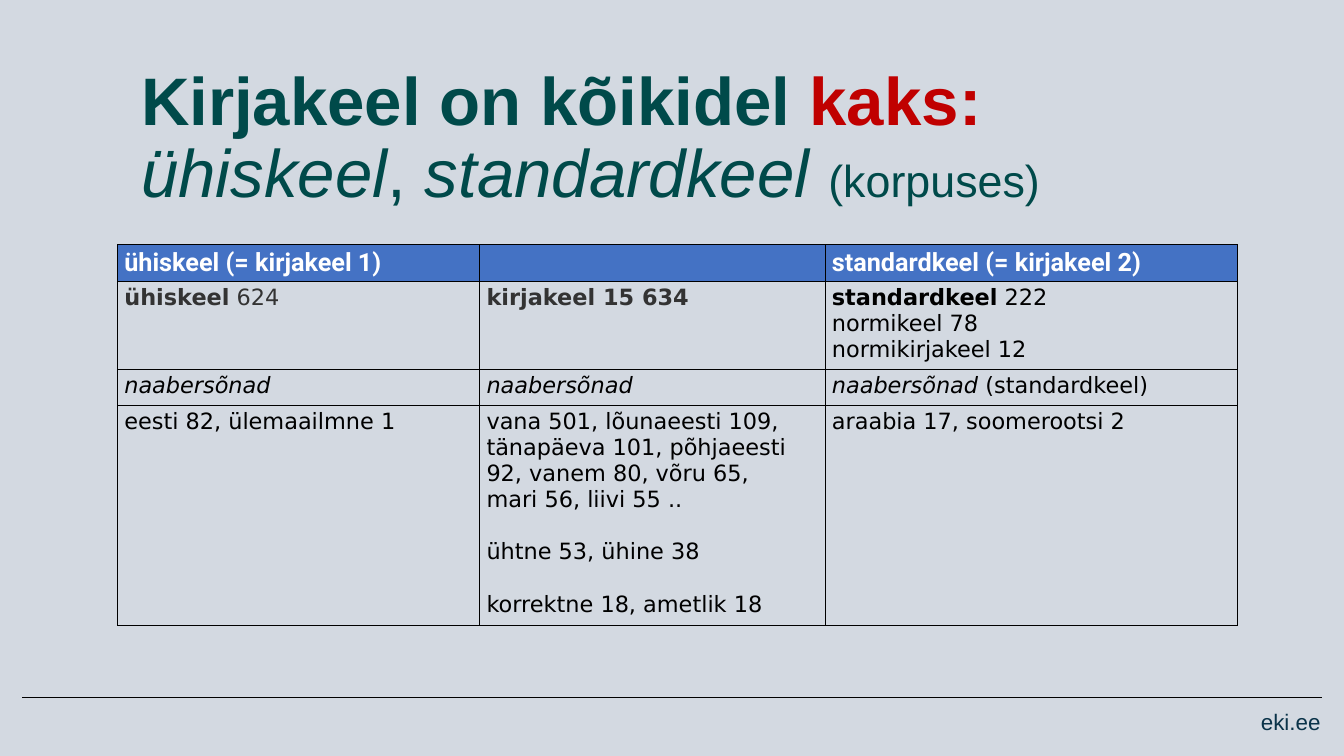
from lxml.etree import SubElement
from pptx import Presentation
from pptx.dml.color import RGBColor
from pptx.enum.shapes import MSO_CONNECTOR as Connector
from pptx.enum.text import MSO_ANCHOR as Anchor, PP_ALIGN as Align
from pptx.oxml.ns import qn
from pptx.util import Inches, Pt

THEME = {
    "background": "D3D9E1",
    "rule": "000000",
    "header_fill": "4472C4",
    "styles": {
        "title": dict(name="Arial", size=72, color="004A4A", bold=True),
        "accent": dict(name="Arial", size=72, color="C00000", bold=True),
        "term": dict(name="Arial", size=72, color="004A4A", italic=True),
        "joiner": dict(name="Arial", size=72, color="004A4A"),
        "note": dict(name="Arial", size=48, color="004A4A"),
        "footer": dict(name="Arial", size=24, color="0A3349"),
        "header": dict(name="Roboto", size=27, color="FFFFFF", bold=True),
        "grey": dict(name="DejaVu Sans", size=24, color="333333"),
        "grey_bold": dict(name="DejaVu Sans", size=24, color="333333", bold=True),
        "body": dict(name="DejaVu Sans", size=24, color="000000"),
        "body_bold": dict(name="DejaVu Sans", size=24, color="000000", bold=True),
        "body_italic": dict(name="DejaVu Sans", size=24, color="000000", italic=True),
    },
}
GROUP_GAP = Pt(28)

# Each paragraph is a list of (text, style) runs; "\n" is a line break.
TITLE = [
    ("Kirjakeel on kõikidel ", "title"), ("kaks:", "accent"), ("\n", "accent"),
    ("ühiskeel", "term"), (", ", "joiner"), ("standardkeel ", "term"),
    ("(korpuses)", "note"),
]
FOOTER = [("eki.ee", "footer")]

# Each cell is a list of groups, each group a list of paragraphs.
ROWS = [
    [
        [[[("ühiskeel (= kirjakeel 1)", "header")]]],
        [],
        [[[("standardkeel (= kirjakeel 2)", "header")]]],
    ],
    [
        [[[("ühiskeel", "grey_bold"), (" 624", "grey")]]],
        [[[("kirjakeel 15 634", "grey_bold")]]],
        [[
            [("standardkeel", "body_bold"), (" 222", "body")],
            [("normikeel 78", "body")],
            [("normikirjakeel 12", "body")],
        ]],
    ],
    [
        [[[("naabersõnad", "body_italic")]]],
        [[[("naabersõnad", "body_italic")]]],
        [[[("naabersõnad ", "body_italic"), ("(standardkeel)", "body")]]],
    ],
    [
        [[[("eesti 82, ülemaailmne 1", "body")]]],
        [
            [
                [("vana 501, lõunaeesti 109, tänapäeva 101, põhjaeesti 92, "
                  "vanem 80, võru 65,", "body")],
                [("mari 56, liivi 55 ..", "body")],
            ],
            [[("ühtne 53, ühine 38", "body")]],
            [[("korrektne 18, ametlik 18", "body")]],
        ],
        [[[("araabia 17, soomerootsi 2", "body")]]],
    ],
]
COLUMN_WIDTHS = [5.39, 5.14, 6.14]
ROW_HEIGHTS = [0.54, 1.27, 0.54, 3.21]


def rgb(value):
    return RGBColor.from_string(value)


def write_runs(paragraph, runs):
    for text, style in runs:
        if text == "\n":
            paragraph.add_line_break()
            continue
        run = paragraph.add_run()
        run.text = text
        settings = {"bold": False, "italic": False, **THEME["styles"][style]}
        run.font.color.rgb = rgb(settings.pop("color"))
        settings["size"] = Pt(settings["size"])
        for key, value in settings.items():
            setattr(run.font, key, value)


def add_text(slide, box, runs, align, anchor):
    frame = slide.shapes.add_textbox(*map(Inches, box)).text_frame
    frame.word_wrap = True
    frame.vertical_anchor = anchor
    paragraph = frame.paragraphs[0]
    paragraph.alignment = align
    paragraph.line_spacing = 0.9
    write_runs(paragraph, runs)


def write_groups(frame, groups):
    """Write the paragraphs, with a gap before each group but the first."""
    paragraph = None
    for group in groups:
        for index, runs in enumerate(group):
            is_first = paragraph is None
            paragraph = frame.paragraphs[0] if is_first else frame.add_paragraph()
            if index == 0 and not is_first:
                paragraph.space_before = GROUP_GAP
            write_runs(paragraph, runs)


def add_borders(cell):
    properties = cell._tc.get_or_add_tcPr()
    for position, side in enumerate(("a:lnL", "a:lnR", "a:lnT", "a:lnB")):
        border = SubElement(properties, qn(side), w=str(Pt(1)))
        fill = SubElement(border, qn("a:solidFill"))
        SubElement(fill, qn("a:srgbClr"), val=THEME["rule"])
        properties.insert(position, border)


def add_word_table(slide):
    table = slide.shapes.add_table(
        len(ROWS), len(COLUMN_WIDTHS), Inches(1.75), Inches(3.64),
        Inches(sum(COLUMN_WIDTHS)), Inches(sum(ROW_HEIGHTS))).table
    for column, width in zip(table.columns, COLUMN_WIDTHS):
        column.width = Inches(width)
    for row, height in zip(table.rows, ROW_HEIGHTS):
        row.height = Inches(height)
    for row_index, row in enumerate(ROWS):
        for column_index, groups in enumerate(row):
            cell = table.cell(row_index, column_index)
            if row_index == 0:
                cell.fill.solid()
                cell.fill.fore_color.rgb = rgb(THEME["header_fill"])
            else:
                cell.fill.background()
            add_borders(cell)
            write_groups(cell.text_frame, groups)


def add_footer_rule(slide):
    rule = slide.shapes.add_connector(
        Connector.STRAIGHT, *map(Inches, (0.33, 10.38, 19.67, 10.38)))
    rule.line.color.rgb = rgb(THEME["rule"])
    rule.line.width = Pt(1)
    SubElement(rule._element.spPr, qn("a:effectLst"))


def main():
    deck = Presentation()
    deck.slide_width, deck.slide_height = Inches(20), Inches(11.25)
    slide = deck.slides.add_slide(deck.slide_layouts[6])
    slide.background.fill.solid()
    slide.background.fill.fore_color.rgb = rgb(THEME["background"])
    add_footer_rule(slide)
    add_text(slide, (16.25, 10.54, 3.5, 0.58), FOOTER, Align.RIGHT, Anchor.TOP)
    add_text(slide, (2, 1.46, 16.92, 1.75), TITLE, Align.LEFT, Anchor.BOTTOM)
    add_word_table(slide)
    deck.save("out.pptx")


if __name__ == "__main__":
    main()
